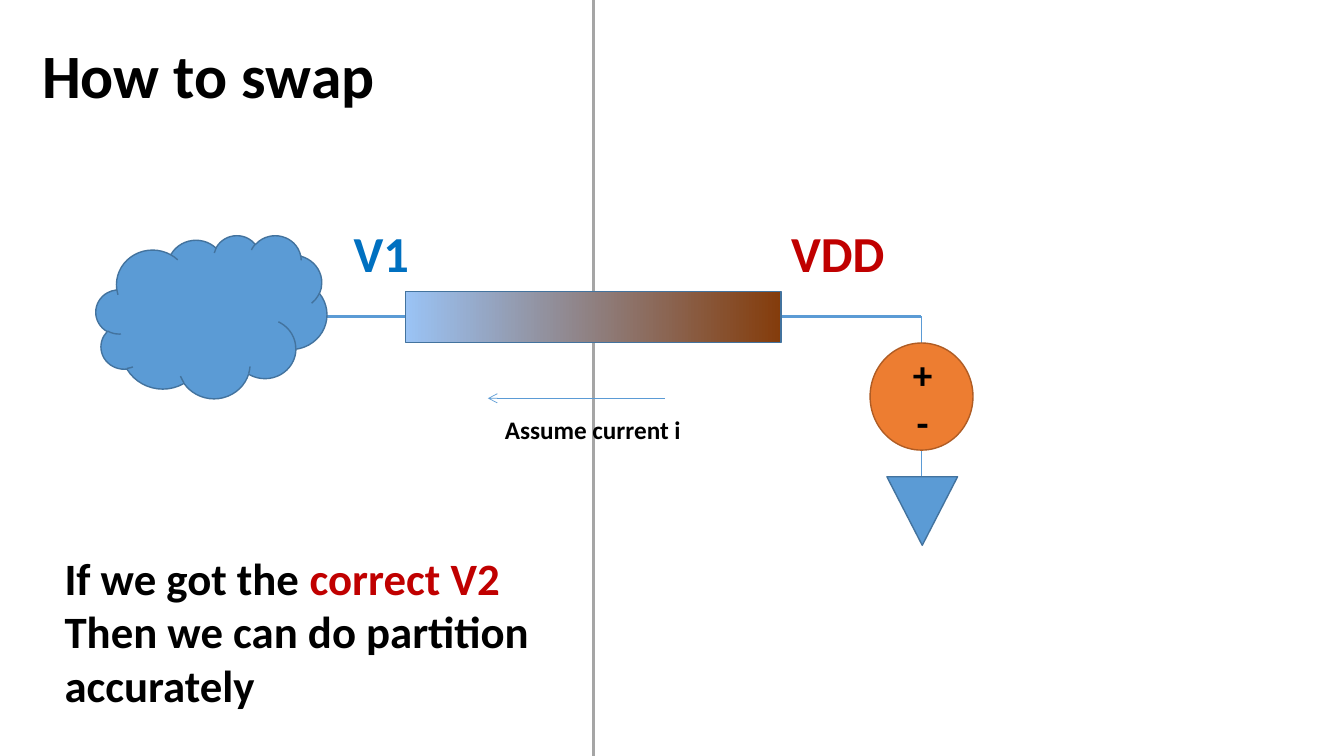
from pptx import Presentation
from pptx.dml.color import RGBColor
from pptx.enum import shapes, text
from pptx.oxml import ns, xmlchemy
from pptx.util import Pt

BLACK = RGBColor(0x00, 0x00, 0x00)
RED = RGBColor(0xC0, 0x00, 0x00)
LABEL_BLUE = RGBColor(0x00, 0x70, 0xC0)
BLUE = RGBColor(0x5B, 0x9B, 0xD5)
DARK_BLUE = RGBColor(0x43, 0x73, 0x9E)
PALE_BLUE = RGBColor(0x9A, 0xC3, 0xF5)
BROWN = RGBColor(0x84, 0x3C, 0x0B)
ORANGE = RGBColor(0xED, 0x7D, 0x31)
DARK_ORANGE = RGBColor(0xAF, 0x5C, 0x24)
GRAY = RGBColor(0xA5, 0xA5, 0xA5)

KIND = shapes.MSO_SHAPE
WIRE_X = 658
WIRE_Y = 226
GROUND_TOP = 340.5


def add_line(page, start, end, color, width, arrow=False):
    line = page.shapes.add_connector(
        shapes.MSO_CONNECTOR.STRAIGHT, *map(Pt, (*start, *end)))
    line.line.color.rgb = color
    line.line.width = Pt(width)
    if arrow:
        tail = xmlchemy.OxmlElement("a:tailEnd")
        tail.set("type", "arrow")
        line.line._get_or_add_ln().append(tail)
    properties = line._element.find(ns.qn("p:spPr"))
    properties.append(xmlchemy.OxmlElement("a:effectLst"))


def add_outlined(page, kind, area, outline, fill=None, rotation=0):
    shape = page.shapes.add_shape(kind, *map(Pt, area))
    shape.shadow.inherit = False
    shape.rotation = rotation
    shape.line.color.rgb = outline
    shape.line.width = Pt(1)
    if fill is not None:
        shape.fill.solid()
        shape.fill.fore_color.rgb = fill
    return shape


def add_resistor(page):
    resistor = add_outlined(
        page, KIND.RECTANGLE, (289.5, 208, 268.5, 36.5), DARK_BLUE, rotation=180)
    resistor.fill.gradient()
    resistor.fill.gradient_angle = 180
    for stop, color in zip(resistor.fill.gradient_stops, (PALE_BLUE, BROWN)):
        stop.color.rgb = color


def add_text(page, area, size, lines, align=text.PP_ALIGN.LEFT):
    box = page.shapes.add_textbox(*map(Pt, area))
    frame = box.text_frame
    frame.word_wrap = False
    frame.auto_size = text.MSO_AUTO_SIZE.SHAPE_TO_FIT_TEXT
    for index, spans in enumerate(lines):
        para = frame.add_paragraph() if index else frame.paragraphs[0]
        para.alignment = align
        para.font.name = "Calibri"
        para.font.size = Pt(size)
        para.font.bold = True
        for words, color in spans:
            span = para.add_run()
            span.text = words
            span.font.color.rgb = color


def main():
    deck = Presentation()
    deck.slide_width, deck.slide_height = Pt(960), Pt(540)
    page = deck.slides.add_slide(deck.slide_layouts[6])

    add_line(page, (WIRE_X, WIRE_Y), (WIRE_X, GROUND_TOP), BLUE, 0.5)
    add_line(page, (424, 0), (424, 540), GRAY, 2.25)
    add_line(page, (177, WIRE_Y), (WIRE_X, WIRE_Y), BLUE, 2.25)
    add_resistor(page)
    add_outlined(page, KIND.CLOUD, (68.5, 168, 165, 116.5), DARK_BLUE, BLUE)

    add_text(page, (23, 23, 254, 60.5), 44, [[("How to swap", BLACK)]])
    add_text(page, (245.5, 155, 54.5, 51), 36, [[("V1", LABEL_BLUE)]])
    add_text(page, (558, 155, 82, 51), 36, [[("VDD", RED)]])
    add_line(page, (475, 284.5), (348.5, 284.5), BLUE, 0.5, arrow=True)
    add_text(page, (353.5, 292.5, 141, 29), 18, [[("Assume current i", BLACK)]])

    add_outlined(page, KIND.OVAL, (621.5, 245, 73.5, 76.5), DARK_ORANGE, ORANGE)
    add_text(page, (644.5, 247, 29, 75), 28,
             [[("+", BLACK)], [("-", BLACK)]], text.PP_ALIGN.CENTER)
    add_text(page, (39, 389.5, 350, 124), 32, [
        [("If we got the ", BLACK), ("correct V2", RED)],
        [("Then we can do partition", BLACK)],
        [("accurately", BLACK)],
    ])
    add_outlined(page, KIND.ISOSCELES_TRIANGLE, (633.5, GROUND_TOP, 50.5, 49),
                 DARK_BLUE, BLUE, rotation=180)
    deck.save("out.pptx")


if __name__ == "__main__":
    main()
